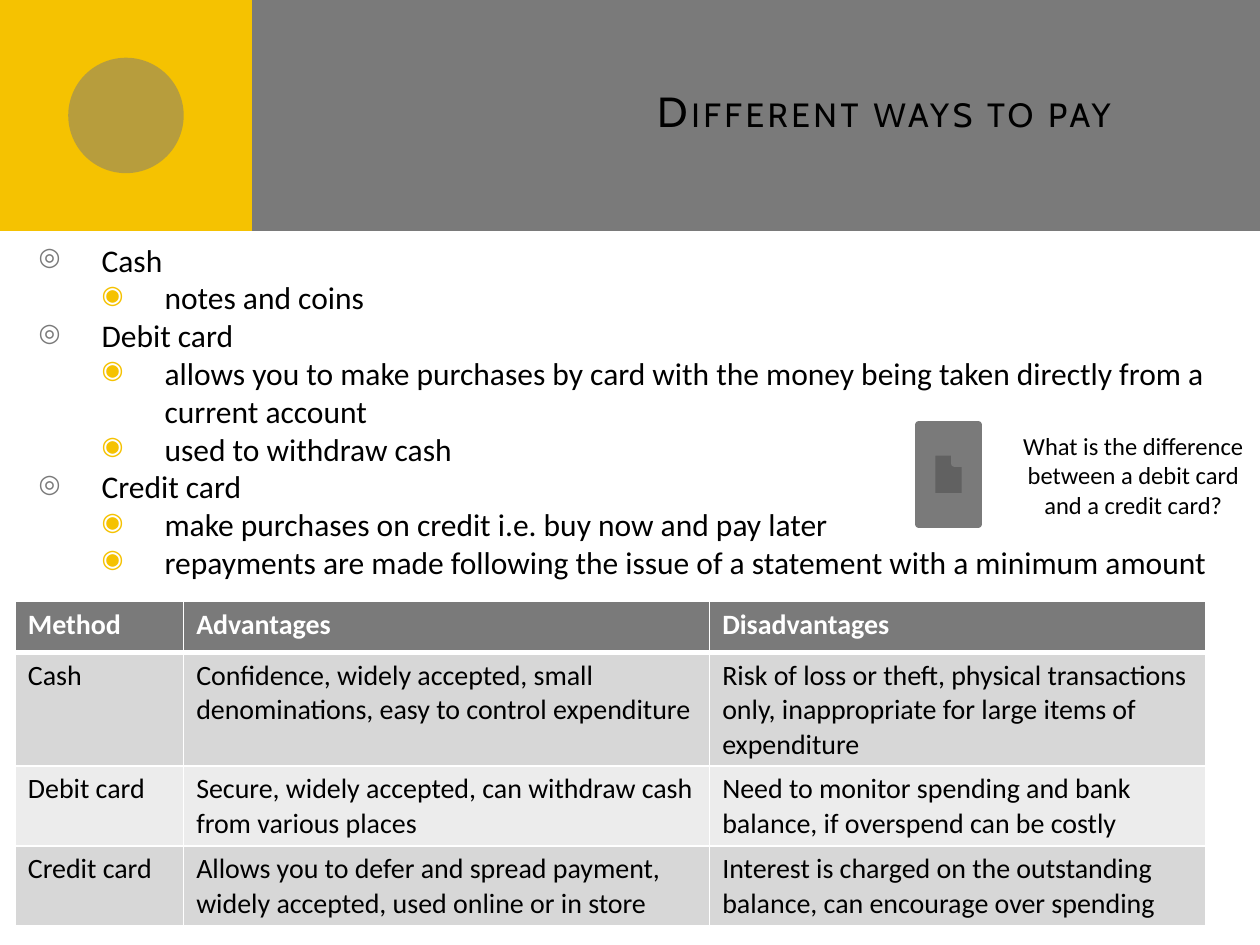
from dataclasses import dataclass
from typing import Any

from lxml.etree import SubElement
from pptx import Presentation
from pptx.dml.color import RGBColor
from pptx.enum.shapes import MSO_SHAPE
from pptx.enum.text import MSO_ANCHOR, PP_ALIGN
from pptx.oxml.ns import qn
from pptx.util import Pt

COLOURS = {
    "grey": "7A7A7A",
    "yellow": "F5C201",
    "black": "000000",
    "white": "FFFFFF",
    "dark_band": "D7D7D7",
    "light_band": "ECECEC",
}


@dataclass(frozen=True)
class Box:
    left: float
    top: float
    width: float
    height: float

    def lengths(self) -> tuple:
        return Pt(self.left), Pt(self.top), Pt(self.width), Pt(self.height)


@dataclass(frozen=True)
class Panel:
    kind: MSO_SHAPE
    box: Box
    colour: str
    opacity: int = 100
    line_width: float = 0


@dataclass(frozen=True)
class Bullet:
    symbol: str
    colour: str
    indent: float


@dataclass(frozen=True)
class Point:
    text: str
    level: int = 0


PANELS = [
    Panel(MSO_SHAPE.RECTANGLE, Box(0, 0, 720, 132), "grey"),
    Panel(MSO_SHAPE.RECTANGLE, Box(0, 0, 144, 132), "yellow"),
    Panel(MSO_SHAPE.OVAL, Box(39, 33, 66, 66), "grey", opacity=50),
]
DOCUMENT_BUTTON = Panel(
    MSO_SHAPE.ACTION_BUTTON_DOCUMENT, Box(525, 242.6, 34, 57), "grey", line_width=4
)
BULLETS = [Bullet("◎", "grey", 36), Bullet("◉", "yellow", 72)]
POINTS = [
    Point("Cash"),
    Point("notes and coins", 1),
    Point("Debit card"),
    Point("allows you to make purchases by card with the money being taken "
          "directly from a current account", 1),
    Point("used to withdraw cash", 1),
    Point("Credit card"),
    Point("make purchases on credit i.e. buy now and pay later", 1),
    Point("repayments are made following the issue of a statement with a "
          "minimum amount", 1),
]
COLUMN_WIDTHS = [96.2, 300.6, 283.4]
ROW_HEIGHT = 29.2
PAYMENT_METHODS = [
    ("Method", "Advantages", "Disadvantages"),
    ("Cash",
     "Confidence, widely accepted, small denominations, easy to control expenditure",
     "Risk of loss or theft, physical transactions only, inappropriate for large "
     "items of expenditure"),
    ("Debit card",
     "Secure, widely accepted, can withdraw cash from various places",
     "Need to monitor spending and bank balance, if overspend can be costly"),
    ("Credit card",
     "Allows you to defer and spread payment, widely accepted, used online or in store",
     "Interest is charged on the outstanding balance, can encourage over spending"),
]


def rgb(colour: str) -> RGBColor:
    return RGBColor.from_string(COLOURS[colour])


def write(paragraph: Any, text: str, *, size: float, font: str = "Calibri",
          colour: str = "black", bold: bool = False, align: Any = None,
          spacing: float = 0, small_caps: bool = False) -> None:
    run = paragraph.add_run()
    run.text = text
    run.font.size = Pt(size)
    run.font.name = font
    run.font.bold = bold
    run.font.color.rgb = rgb(colour)
    if align is not None:
        paragraph.alignment = align
    properties = run.font._element
    if spacing:
        properties.set("spc", str(int(spacing * 100)))
    if small_caps:
        properties.set("cap", "small")


def draw_panel(slide: Any, panel: Panel) -> None:
    shape = slide.shapes.add_shape(panel.kind, *panel.box.lengths())
    shape.shadow.inherit = False
    shape.fill.solid()
    shape.fill.fore_color.rgb = rgb(panel.colour)
    if panel.opacity < 100:
        fill_colour = shape._element.spPr.find(f"{qn('a:solidFill')}/{qn('a:srgbClr')}")
        SubElement(fill_colour, qn("a:alpha"), val=str(panel.opacity * 1000))
    if panel.line_width:
        shape.line.color.rgb = rgb(panel.colour)
        shape.line.width = Pt(panel.line_width)
    else:
        shape.line.fill.background()


def add_text_frame(slide: Any, box: Box, anchor: Any = MSO_ANCHOR.TOP) -> Any:
    frame = slide.shapes.add_textbox(*box.lengths()).text_frame
    frame.word_wrap = True
    frame.vertical_anchor = anchor
    return frame


def add_bullet(paragraph: Any, bullet: Bullet) -> None:
    properties = paragraph._p.get_or_add_pPr()
    properties.set("marL", str(Pt(bullet.indent)))
    properties.set("indent", str(-Pt(36)))
    bullet_colour = SubElement(properties, qn("a:buClr"))
    SubElement(bullet_colour, qn("a:srgbClr"), val=COLOURS[bullet.colour])
    SubElement(properties, qn("a:buSzPct"), val="80000")
    SubElement(properties, qn("a:buChar"), char=bullet.symbol)


def draw_points(slide: Any, box: Box, points: list[Point]) -> None:
    frame = add_text_frame(slide, box)
    for index, point in enumerate(points):
        paragraph = frame.add_paragraph() if index else frame.paragraphs[0]
        paragraph.level = point.level
        add_bullet(paragraph, BULLETS[point.level])
        write(paragraph, point.text, size=18)


def add_border(cell: Any, side: str, width: float) -> None:
    border = SubElement(cell._tc.get_or_add_tcPr(), qn(f"a:{side}"), w=str(Pt(width)))
    fill = SubElement(border, qn("a:solidFill"))
    SubElement(fill, qn("a:srgbClr"), val=COLOURS["white"])


def draw_table(slide: Any, left: float, top: float, rows: list[tuple]) -> None:
    box = Box(left, top, sum(COLUMN_WIDTHS), ROW_HEIGHT * len(rows))
    table = slide.shapes.add_table(len(rows), len(COLUMN_WIDTHS), *box.lengths()).table
    for column, width in zip(table.columns, COLUMN_WIDTHS):
        column.width = Pt(width)
    for row_index, row in enumerate(rows):
        header = row_index == 0
        band = "grey" if header else "dark_band" if row_index % 2 else "light_band"
        for column_index, text in enumerate(row):
            cell = table.cell(row_index, column_index)
            for side in ("lnL", "lnR", "lnT", "lnB"):
                heavy = (header and side == "lnB") or (row_index == 1 and side == "lnT")
                add_border(cell, side, 3 if heavy else 1)
            cell.fill.solid()
            cell.fill.fore_color.rgb = rgb(band)
            write(cell.text_frame.paragraphs[0], text, size=16, bold=header,
                  colour="white" if header else "black")


def main() -> None:
    presentation = Presentation()
    presentation.slide_width, presentation.slide_height = Pt(720), Pt(540)
    slide = presentation.slides.add_slide(presentation.slide_layouts[6])
    for panel in PANELS:
        draw_panel(slide, panel)
    title = add_text_frame(slide, Box(192, 18, 492, 90), MSO_ANCHOR.MIDDLE)
    write(title.paragraphs[0], "Different ways to pay", size=24, font="Cabin",
          align=PP_ALIGN.RIGHT, spacing=2, small_caps=True)
    draw_points(slide, Box(15, 134, 703, 357), POINTS)
    draw_panel(slide, DOCUMENT_BUTTON)
    question = add_text_frame(slide, Box(575.3, 242.6, 144.7, 58.2))
    write(question.paragraphs[0],
          "What is the difference between a debit card and a credit card?",
          size=14, align=PP_ALIGN.CENTER)
    draw_table(slide, 8.8, 343.7, PAYMENT_METHODS)
    presentation.save("out.pptx")


if __name__ == "__main__":
    main()
